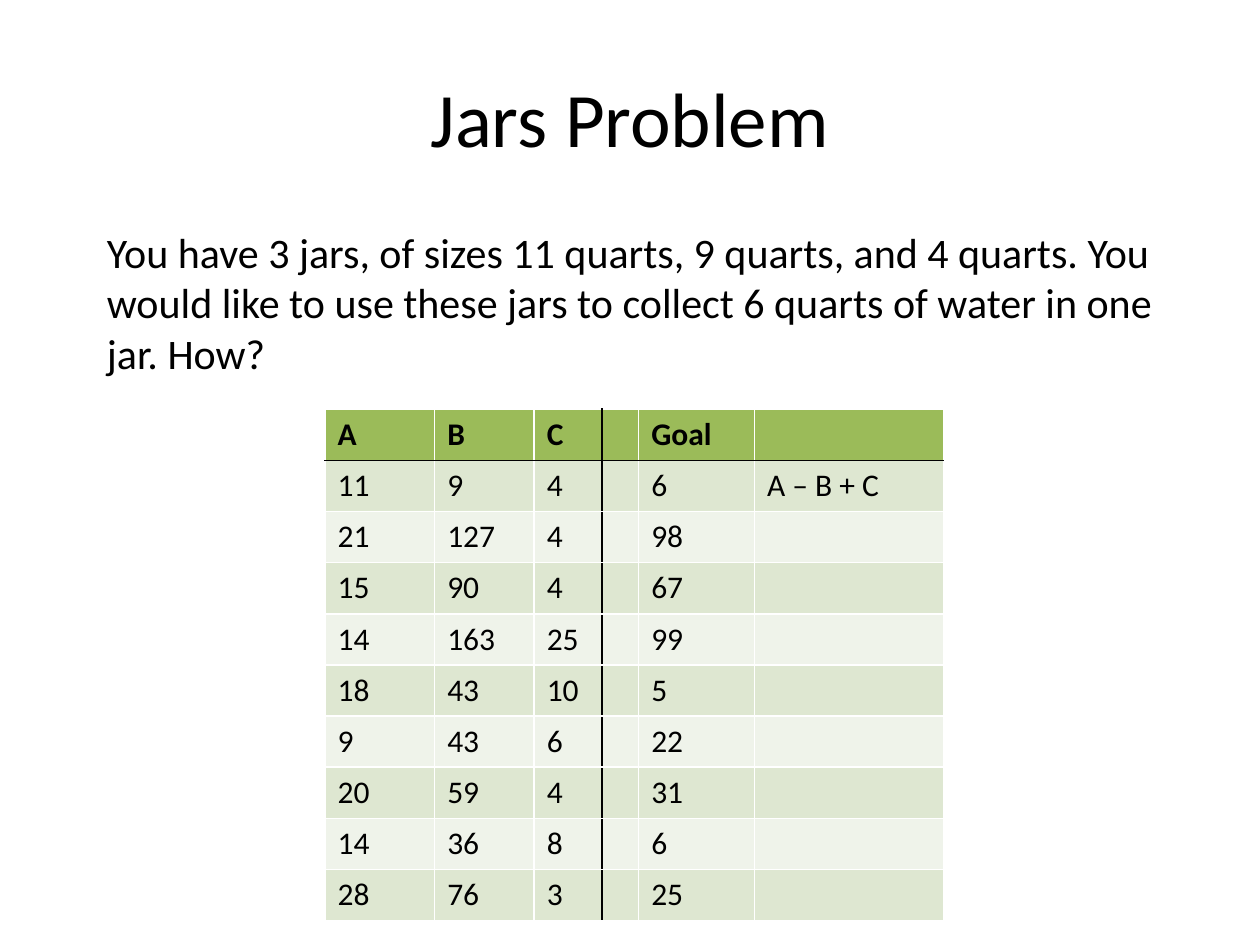
from dataclasses import dataclass

from pptx import Presentation, util as u
from pptx.dml.color import RGBColor
from pptx.enum import text
from pptx.oxml.ns import qn
from lxml import etree

COLORS = {
    "ink": "000000",
    "rule": "FFFFFF",
    "header": "9BBB59",
    "odd": "DEE7D1",
    "even": "EFF3EA",
}
FONT = "Calibri"
WIDTH, HEIGHT = u.Inches(10), u.Inches(7.5)

COLUMN_WIDTHS = (0.87, 0.79, 0.54, 0.29, 0.92, 1.5)
ROW_HEIGHT = 0.406
DIVIDER = 3  # the dark vertical line stands left of this column
ROWS = (
    ("A", "B", "C", "", "Goal", ""),
    ("11", "9", "4", "", "6", "A – B + C"),
    ("21", "127", "4", "", "98", ""),
    ("15", "90", "4", "", "67", ""),
    ("14", "163", "25", "", "99", ""),
    ("18", "43", "10", "", "5", ""),
    ("9", "43", "6", "", "22", ""),
    ("20", "59", "4", "", "31", ""),
    ("14", "36", "8", "", "6", ""),
    ("28", "76", "3", "", "25", ""),
)


@dataclass(frozen=True)
class Box:
    """A frame given as shares of the slide's size."""
    left: float
    top: float
    width: float
    height: float

    def lengths(self) -> tuple:
        return (int(self.left * WIDTH), int(self.top * HEIGHT),
                int(self.width * WIDTH), int(self.height * HEIGHT))


TITLE_BOX = Box(0.05, 0.04, 0.9, 1 / 6)
TABLE_BOX = Box(0.258, 0.433, 0.491, 0.541)
QUESTION_BOX = Box(0.075, 0.233, 0.883, 0.173)


def write(frame, words: str, size: float, bold: bool = False) -> None:
    frame.text = words
    for run in frame.paragraphs[0].runs:
        run.font.name = FONT
        run.font.size = u.Pt(size)
        run.font.bold = bold
        run.font.color.rgb = RGBColor.from_string(COLORS["ink"])


def set_border(cell, side: str, color: str) -> None:
    properties = cell._tc.get_or_add_tcPr()
    line = etree.SubElement(properties, qn(f"a:ln{side}"), w=str(u.Pt(1)))
    fill = etree.SubElement(line, qn("a:solidFill"))
    etree.SubElement(fill, qn("a:srgbClr"), val=COLORS[color])


def style_cell(cell, row: int, column: int) -> None:
    dark = {
        "L": column == DIVIDER,
        "R": column == DIVIDER - 1,
        "T": row == 1,
        "B": row == 0,
    }
    for side, is_dark in dark.items():
        set_border(cell, side, "ink" if is_dark else "rule")
    band = "header" if row == 0 else "odd" if row % 2 else "even"
    cell.fill.solid()
    cell.fill.fore_color.rgb = RGBColor.from_string(COLORS[band])


def add_jars_table(slide) -> None:
    table = slide.shapes.add_table(
        len(ROWS), len(COLUMN_WIDTHS), *TABLE_BOX.lengths()).table
    for column, width in zip(table.columns, COLUMN_WIDTHS):
        column.width = u.Inches(width)
    for row, values in enumerate(ROWS):
        table.rows[row].height = u.Inches(ROW_HEIGHT)
        for column, value in enumerate(values):
            cell = table.cell(row, column)
            write(cell.text_frame, value, 18, bold=row == 0)
            style_cell(cell, row, column)


def main() -> None:
    presentation = Presentation()
    presentation.slide_width, presentation.slide_height = WIDTH, HEIGHT
    slide = presentation.slides.add_slide(presentation.slide_layouts[5])

    # Title
    title = slide.shapes.title
    title.left, title.top, title.width, title.height = TITLE_BOX.lengths()
    write(title.text_frame, "Jars Problem", 44)
    title.text_frame.vertical_anchor = text.MSO_ANCHOR.MIDDLE
    title.text_frame.paragraphs[0].alignment = text.PP_ALIGN.CENTER

    # Jar sizes and goals
    add_jars_table(slide)

    # Question
    question = slide.shapes.add_textbox(*QUESTION_BOX.lengths()).text_frame
    question.word_wrap = True
    question.auto_size = text.MSO_AUTO_SIZE.SHAPE_TO_FIT_TEXT
    write(question, "You have 3 jars, of sizes 11 quarts, 9 quarts, and 4 quarts. "
          "You would like to use these jars to collect 6 quarts of water in "
          "one jar. How?", 24)

    presentation.save("out.pptx")


if __name__ == "__main__":
    main()
